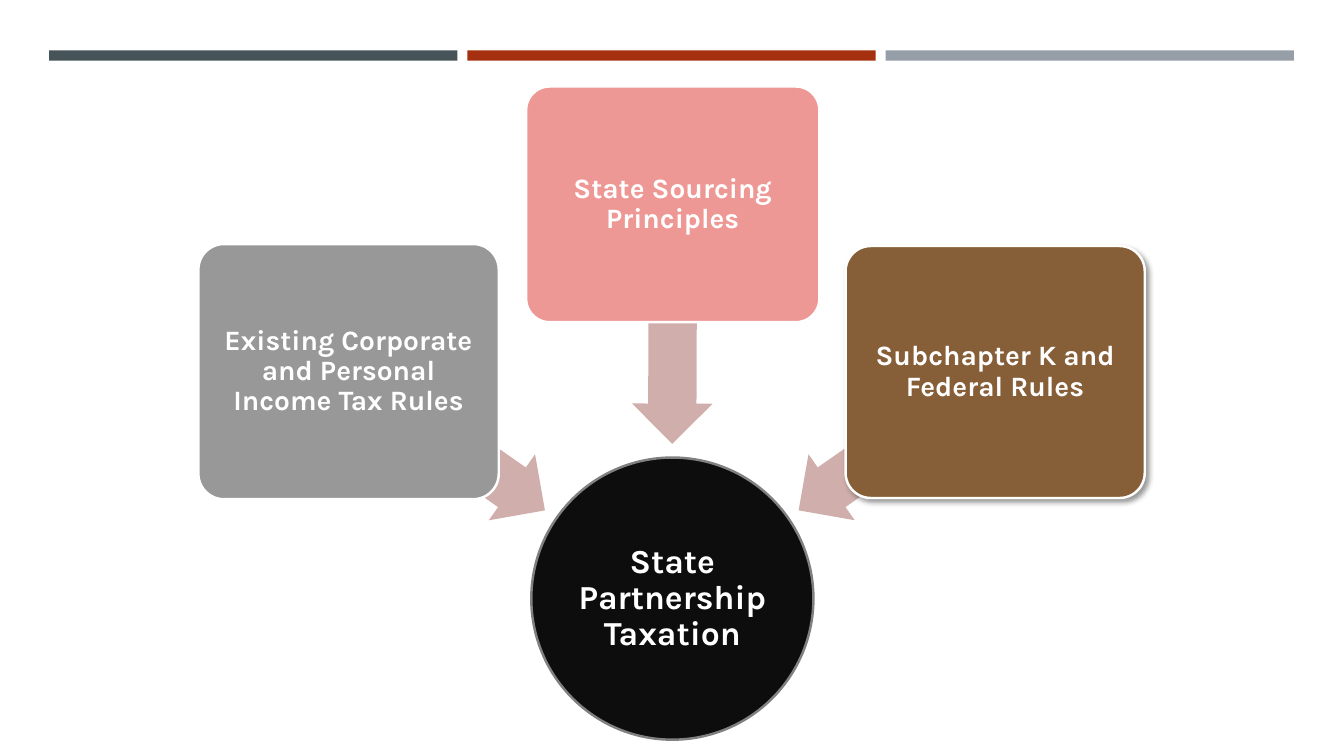
from dataclasses import dataclass

from lxml import etree
from pptx import Presentation
from pptx.dml.color import RGBColor
from pptx.enum import shapes, text
from pptx.oxml import ns
from pptx.shapes.autoshape import Shape
from pptx.slide import Slide
from pptx.util import Cm, Pt

FONT = "Karla"
WHITE = "FFFFFF"
ARROW_COLOUR = "CFAEAB"
KIND = shapes.MSO_SHAPE


@dataclass(frozen=True)
class Area:
    left: float
    top: float
    width: float
    height: float


@dataclass(frozen=True)
class Source:
    label: str
    colour: str
    box: Area
    arrow: Area
    rotation: float
    raised: bool = False


BAR_COLOURS = ("465359", "A5300F", "969FA7")
BAR = Area(1.24, 1.27, 10.29, 0.26)
BAR_PITCH = 10.54

CORE = Area(13.39, 11.53, 7.11, 7.11)
SOURCES = (
    Source("Existing Corporate and Personal Income Tax Rules", "989898",
           Area(5, 6.15, 7.57, 6.43), Area(8.23, 10.11, 6.05, 2.03), 215),
    Source("State Sourcing Principles", "EE9896",
           Area(13.26, 2.18, 7.39, 5.94), Area(13.94, 7.16, 6.02, 2.03), 270.2),
    Source("Subchapter K and Federal Rules", "865E37",
           Area(21.31, 6.2, 7.54, 6.35), Area(19.58, 10.11, 6.05, 2.03), 325,
           raised=True),
)


def colour(hex_code: str) -> RGBColor:
    return RGBColor.from_string(hex_code)


def add_figure(slide: Slide, kind: KIND, area: Area, fill: str,
               outline: str | None = None) -> Shape:
    figure = slide.shapes.add_shape(
        kind, Cm(area.left), Cm(area.top), Cm(area.width), Cm(area.height))
    figure.shadow.inherit = False
    figure.fill.solid()
    figure.fill.fore_color.rgb = colour(fill)
    if outline:
        figure.line.color.rgb = colour(outline)
        figure.line.width = Pt(1.75)
    else:
        figure.line.fill.background()
    return figure


def write_label(figure: Shape, label: str, size: float, inset: float) -> None:
    frame = figure.text_frame
    frame.text = label
    frame.word_wrap = True
    frame.vertical_anchor = text.MSO_ANCHOR.MIDDLE
    frame.margin_left = frame.margin_right = Cm(inset)
    frame.margin_top = frame.margin_bottom = Cm(inset)
    paragraph = frame.paragraphs[0]
    paragraph.alignment = text.PP_ALIGN.CENTER
    paragraph.line_spacing = 0.9
    font = paragraph.runs[0].font
    font.name = FONT
    font.size = Pt(size)
    font.bold = True
    font.color.rgb = colour(WHITE)


def add_shadow(figure: Shape) -> None:
    effects = figure._element.spPr.find(ns.qn("a:effectLst"))
    shadow = etree.SubElement(
        effects, ns.qn("a:outerShdw"), blurRad=str(Pt(4)), dist=str(Pt(3)),
        dir=str(45 * 60000), rotWithShape="0")
    tint = etree.SubElement(shadow, ns.qn("a:srgbClr"), val="000000")
    etree.SubElement(tint, ns.qn("a:alpha"), val="40000")


def add_bars(slide: Slide) -> None:
    for index, bar_colour in enumerate(BAR_COLOURS):
        area = Area(BAR.left + index * BAR_PITCH, BAR.top, BAR.width, BAR.height)
        add_figure(slide, KIND.RECTANGLE, area, bar_colour)


def add_source(slide: Slide, source: Source) -> None:
    arrow = add_figure(slide, KIND.LEFT_ARROW, source.arrow, ARROW_COLOUR)
    arrow.rotation = source.rotation
    arrow.adjustments[0] = 0.6
    arrow.adjustments[1] = 0.5

    box = add_figure(slide, KIND.ROUNDED_RECTANGLE, source.box, source.colour, WHITE)
    box.adjustments[0] = 0.1
    write_label(box, source.label, 20, 0.1)
    if source.raised:
        add_shadow(box)


def main() -> None:
    deck = Presentation()
    deck.slide_width = Cm(33.87)
    deck.slide_height = Cm(19.05)
    slide = deck.slides.add_slide(deck.slide_layouts[6])

    # Coloured bars across the top
    add_bars(slide)

    # Central circle
    core = add_figure(slide, KIND.OVAL, CORE, "0D0D0D", "808080")
    write_label(core, "State Partnership Taxation", 24, 0.05)

    # Three sources pointing at the circle
    for source in SOURCES:
        add_source(slide, source)

    deck.save("out.pptx")


if __name__ == "__main__":
    main()
